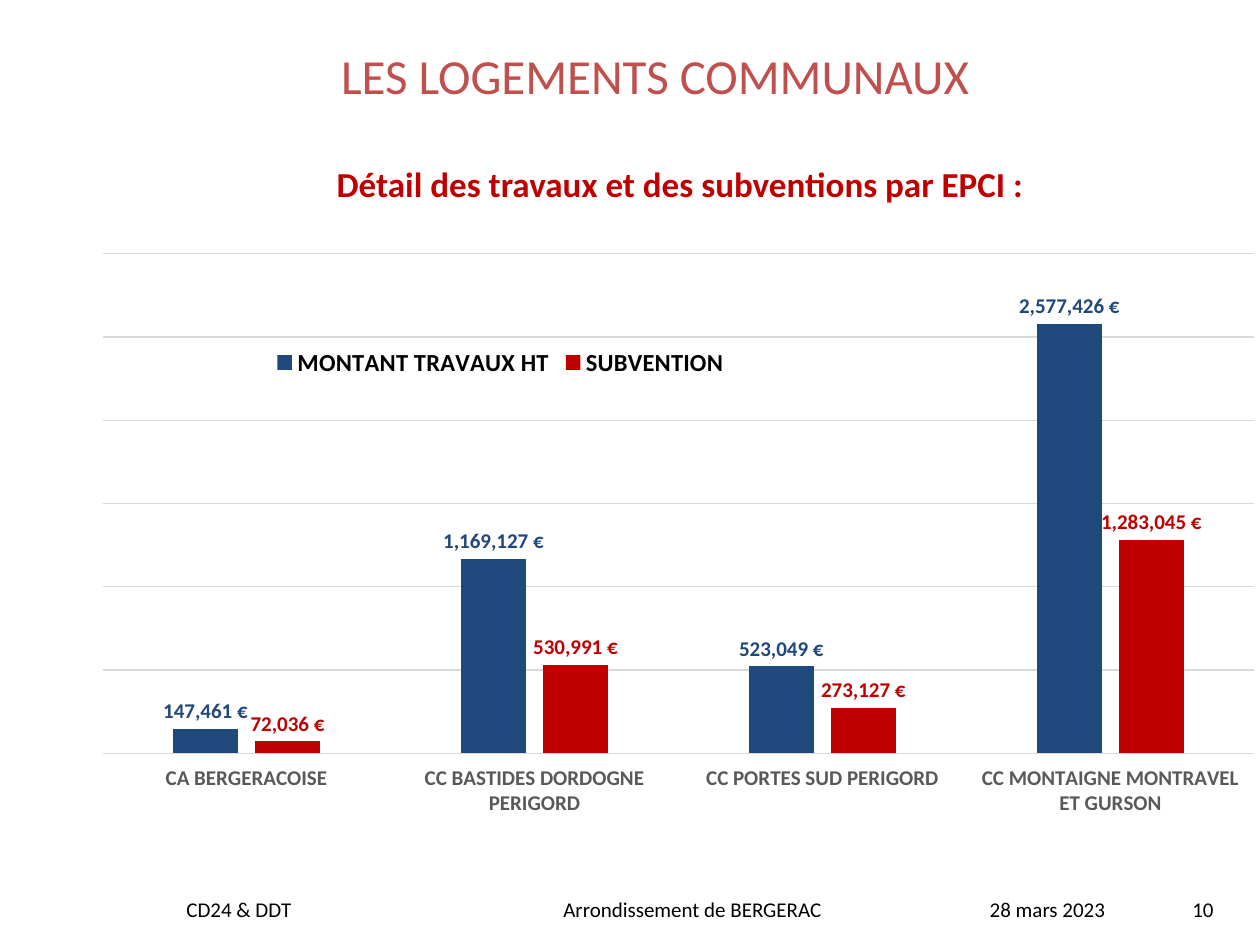
from pptx import Presentation
from pptx.chart.data import CategoryChartData
from pptx.dml.color import RGBColor
from pptx.enum.chart import XL_CHART_TYPE, XL_LABEL_POSITION, XL_LEGEND_POSITION, XL_TICK_LABEL_POSITION, XL_TICK_MARK
from pptx.enum.text import MSO_ANCHOR, PP_ALIGN
from pptx.oxml import parse_xml
from pptx.oxml.ns import nsdecls, qn
from pptx.util import Pt

PX = 914400 / 126
COLORS = {
    "black": "000000",
    "title": "C0504D",
    "blue": "1F497D",
    "red": "C00000",
    "axis": "595959",
    "grid": "D9D9D9",
}


def style_font(font, size, color, bold=False):
    font.name = "Calibri"
    font.size = Pt(size)
    font.bold = bold
    font.color.rgb = RGBColor.from_string(COLORS[color])


def place(element, index, target, x, y, width, height):
    for old in element.findall(qn("c:layout")):
        element.remove(old)
    inner = f'<c:layoutTarget val="{target}"/>' if target else ""
    element.insert(index, parse_xml(
        f'<c:layout {nsdecls("c")}><c:manualLayout>{inner}'
        '<c:xMode val="edge"/><c:yMode val="edge"/>'
        f'<c:x val="{x}"/><c:y val="{y}"/><c:w val="{width}"/><c:h val="{height}"/>'
        '</c:manualLayout></c:layout>'))


deck = Presentation()
deck.slide_width = round(1260 * PX)
deck.slide_height = round(945 * PX)
page = deck.slides.add_slide(deck.slide_layouts[6])

texts = [
    ("CD24 & DDT", (174, 890, 328, 38), 12, "black", False, PP_ALIGN.LEFT),
    ("Arrondissement de BERGERAC", (551, 890, 358, 38), 12, "black", False, PP_ALIGN.LEFT),
    ("28 mars 2023", (948, 890, 199, 38), 12, "black", False, PP_ALIGN.CENTER),
    ("10", (1130, 890, 96, 38), 12, "black", False, PP_ALIGN.RIGHT),
    ("LES LOGEMENTS COMMUNAUX", (184, 16, 942, 118), 28, "title", False, PP_ALIGN.CENTER),
    ("Détail des travaux et des subventions par EPCI :", (105, 156, 1150, 55), 20, "red", True, PP_ALIGN.CENTER),
]
for text, frame, size, color, bold, align in texts:
    box = page.shapes.add_textbox(*(round(value * PX) for value in frame))
    box.text_frame.word_wrap = True
    box.text_frame.vertical_anchor = MSO_ANCHOR.MIDDLE if size == 28 else MSO_ANCHOR.TOP
    para = box.text_frame.paragraphs[0]
    para.text = text
    para.alignment = align
    style_font(para.font, size, color, bold)

data = CategoryChartData(number_format='#,##0\\ "€"')
data.categories = [
    "CA BERGERACOISE",
    "CC BASTIDES DORDOGNE PERIGORD",
    "CC PORTES SUD PERIGORD",
    "CC MONTAIGNE MONTRAVEL ET GURSON",
]
data.add_series("MONTANT TRAVAUX HT", [147461, 1169127, 523049, 2577426])
data.add_series("SUBVENTION", [72036, 530991, 273127, 1283045])
frame = (67, 228, 1188, 641)
chart = page.shapes.add_chart(
    XL_CHART_TYPE.COLUMN_CLUSTERED, *(round(value * PX) for value in frame), data).chart
style_font(chart.font, 10, "black")
chart.has_title = False

chart.has_legend = True
legend = chart.legend
legend.position = XL_LEGEND_POSITION.BOTTOM
legend.include_in_layout = False
style_font(legend.font, 14, "black", True)
place(legend._element, 1, None, 0.17, 0.18, 0.39, 0.06)

plot = chart.plots[0]
plot.gap_width = 219
plot.overlap = -27
plot.vary_by_categories = False
place(plot._element.getparent(), 0, "inner", 0.03, 0.04, 0.97, 0.78)

for series, color in zip(plot.series, ["blue", "red"]):
    series.format.fill.solid()
    series.format.fill.fore_color.rgb = RGBColor.from_string(COLORS[color])
    labels = series.data_labels
    labels.show_value = True
    labels.position = XL_LABEL_POSITION.OUTSIDE_END
    labels.number_format = '#,##0\\ "€"'
    labels.number_format_is_linked = False
    style_font(labels.font, 12, color, True)

category_axis = chart.category_axis
category_axis.major_tick_mark = XL_TICK_MARK.NONE
category_axis.tick_label_position = XL_TICK_LABEL_POSITION.LOW
style_font(category_axis.tick_labels.font, 12, "axis", True)
value_axis = chart.value_axis
value_axis.visible = False
value_axis.minimum_scale = 0
value_axis.maximum_scale = 3000000
value_axis.major_unit = 500000
value_axis.has_major_gridlines = True
for line in (category_axis.format.line, value_axis.major_gridlines.format.line):
    line.color.rgb = RGBColor.from_string(COLORS["grid"])
    line.width = Pt(0.75)

deck.save("out.pptx")
